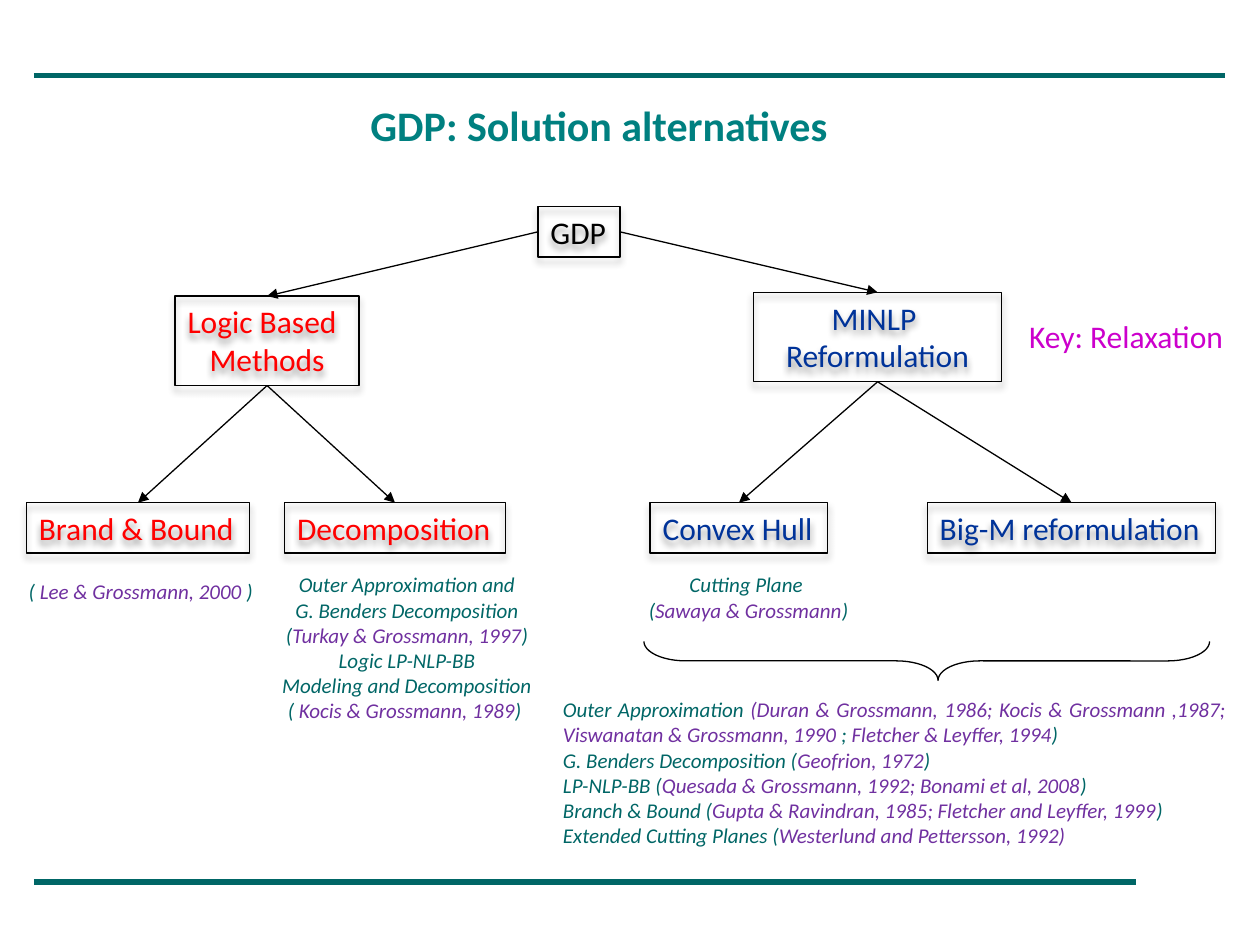
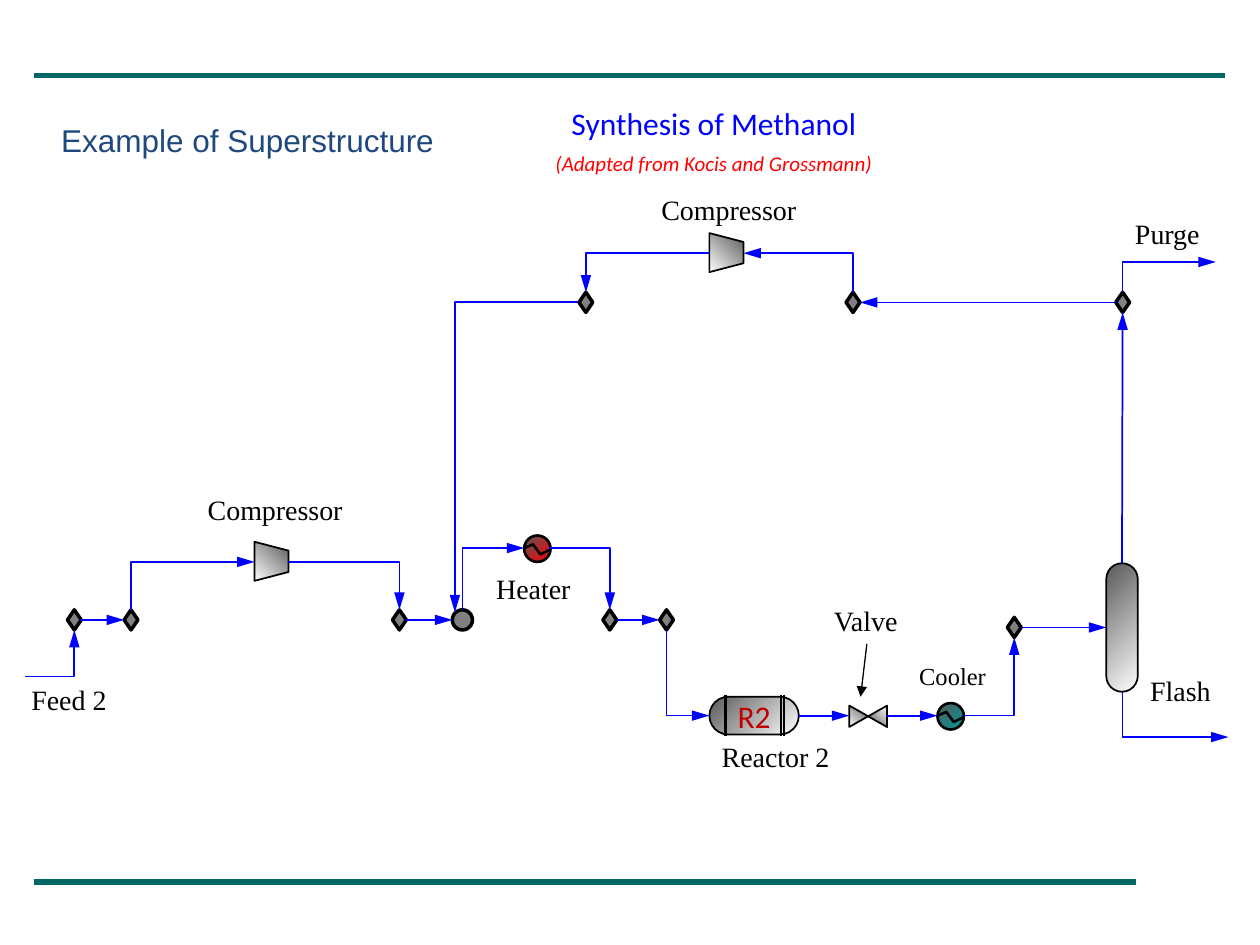
from lxml.etree import SubElement
from pptx import Presentation
from pptx.dml.color import RGBColor
from pptx.enum.shapes import MSO_CONNECTOR as CONN, MSO_SHAPE as SHAPE
from pptx.enum.text import MSO_ANCHOR as ANCHOR, PP_ALIGN as ALIGN
from pptx.oxml.ns import qn
from pptx.util import Inches, Pt

TEAL, PURPLE, RED, NAVY = "006666", "7030A0", "FF0000", "003399"
BLACK, BLUE, GREY, WHITE, STEEL = "000000", "0000FF", "808080", "FFFFFF", "595959"
NODE = dict(size=Pt(18), name="Calibri")
CITE = dict(size=Pt(12), name="Calibri", italic=True)
LABEL = dict(size=Pt(16), name="Times New Roman", color=BLACK)


def rgb(value):
    return RGBColor.from_string(value)


def inches(*values):
    return [Inches(v) for v in values]


def style(font, fmt):
    for key, value in fmt.items():
        if key == "color":
            font.color.rgb = rgb(value)
        else:
            setattr(font, key, value)


def write(sp, paragraphs, align=ALIGN.LEFT, wrap=False, anchor=ANCHOR.TOP):
    tf = sp.text_frame
    tf.word_wrap, tf.vertical_anchor = wrap, anchor
    for i, runs in enumerate(paragraphs):
        p = tf.paragraphs[0] if i == 0 else tf.add_paragraph()
        p.alignment = align
        for text, fmt in runs:
            r = p.add_run()
            r.text = text
            style(r.font, fmt)
    return sp


def text(slide, box, paragraphs, **kw):
    return write(slide.shapes.add_textbox(*inches(*box)), paragraphs, **kw)


def cite(slide, box, lines, **kw):
    paragraphs = [[(part, dict(CITE, color=(TEAL, PURPLE)[i % 2]))
                   for i, part in enumerate(line.split("|")) if part]
                  for line in lines]
    return text(slide, box, paragraphs, **kw)


def title(slide, box, words, align, **fmt):
    sp = slide.shapes.title
    sp.left, sp.top, sp.width, sp.height = inches(*box)
    write(sp, [[(words, fmt)]], align=align, wrap=True)


def shape(slide, kind, box, fill=None, width=1, adj=(), rotation=0):
    sp = slide.shapes.add_shape(kind, *inches(*box))
    sp.shadow.inherit = False
    sp.rotation = rotation
    for i, value in enumerate(adj):
        sp.adjustments[i] = value
    if fill is None:
        sp.fill.background()
    elif isinstance(fill, str):
        sp.fill.solid()
        sp.fill.fore_color.rgb = rgb(fill)
    else:
        sp.fill.gradient()
        sp.fill.gradient_angle = 135
        for stop, color in zip(sp.fill.gradient_stops, fill):
            stop.color.rgb = rgb(color)
    sp.line.color.rgb = rgb(BLACK)
    sp.line.width = Pt(width)
    return sp


def finish(c, color, width, head):
    c.line.color.rgb = rgb(color)
    c.line.width = Pt(width)
    spPr = c.element.spPr
    if head:
        SubElement(spPr.find(qn("a:ln")), qn("a:tailEnd"), type="triangle", len=head)
    SubElement(spPr, qn("a:effectLst"))
    return c


def line(slide, start, end, color=BLACK, width=0.75, head=None):
    c = slide.shapes.add_connector(CONN.STRAIGHT, 0, 0, 0, 0)
    if isinstance(start[0], (int, float)):
        c.begin_x, c.begin_y = inches(*start)
    else:
        c.begin_connect(*start)
    if isinstance(end[0], (int, float)):
        c.end_x, c.end_y = inches(*end)
    else:
        c.end_connect(*end)
    return finish(c, color, width, head)


def stream(slide, start, end):
    return line(slide, start, end, BLUE, 1, "lg")


def elbow(slide, start, end, vertical_first=False):
    (x1, y1), (x2, y2) = start, end
    dx, dy = x2 - x1, y2 - y1
    cx, cy = (x1 + x2) / 2, (y1 + y2) / 2
    if vertical_first:
        angle = 90 if dx > 0 > dy else 270
    else:
        angle = 180 if dx < 0 else 0
    u, v = {0: (dx, dy), 90: (dy, -dx), 180: (-dx, -dy), 270: (-dy, dx)}[angle]
    c = slide.shapes.add_connector(
        CONN.ELBOW, *inches(cx - u / 2, cy - v / 2, cx + u / 2, cy + v / 2))
    spPr = c.element.spPr
    spPr.find(qn("a:prstGeom")).set("prst", "bentConnector2")
    if angle:
        spPr.find(qn("a:xfrm")).set("rot", str(angle * 60000))
    return finish(c, BLUE, 1, "lg")


def add_bands(prs, slide):
    for y, right in ((0.6, 9.72), (7, 9.02)):
        band = line(slide, (0.27, y), (right, y), TEAL, 3)
        prs.slide_master.shapes.element.append(band.element)


def node(slide, box, lines, color, align=ALIGN.LEFT, wrap=False):
    sp = shape(slide, SHAPE.RECTANGLE, box, width=0.75)
    shadow = SubElement(sp.element.spPr.find(qn("a:effectLst")), qn("a:outerShdw"),
                        blurRad=str(Pt(4)), dist=str(Pt(3)), dir="5400000", rotWithShape="0")
    tint = SubElement(shadow, qn("a:srgbClr"), val=BLACK)
    SubElement(tint, qn("a:alpha"), val="40000")
    return write(sp, [[(words, dict(NODE, color=color))] for words in lines], align, wrap)


def branch(slide, parent, children, color, left, top):
    for x, width, words in children:
        child = node(slide, (left + x, top, width, 0.4), [words], color)
        line(slide, (parent, 2), (child, 0), head="med")


def logic_branch(slide, root, left, top):
    methods = node(slide, (left + 1.18, top, 1.46, 0.71), ["Logic Based", "Methods"], RED)
    methods.text_frame.paragraphs[1].alignment = ALIGN.CENTER
    line(slide, (root, 1), (methods, 0), head="med")
    branch(slide, methods, [(0, 1.77, "Brand & Bound"), (2.05, 1.75, "Decomposition")],
           RED, left, top + 1.64)
    cite(slide, (left - 0.08, top + 2.19, 2, 0.3), ["( |Lee & Grossmann, 2000 |)"])
    cite(slide, (left + 1.92, top + 2.14, 2.2, 1.31), [
        "Outer Approximation and",
        "G. Benders Decomposition",
        "(|Turkay & Grossmann, 1997|)",
        "Logic LP-NLP-BB",
        "Modeling and Decomposition",
        "( |Kocis & Grossmann, 1989|) "], align=ALIGN.CENTER)


def minlp_branch(slide, root, left, top):
    minlp = node(slide, (left + 0.82, top, 1.97, 0.71), ["MINLP ", "Reformulation"],
                 NAVY, ALIGN.CENTER, True)
    line(slide, (root, 3), (minlp, 0), head="med")
    text(slide, (left + 2.91, top + 0.15, 1.76, 0.4),
         [[("Key: Relaxation", dict(NODE, color="CC00CC"))]])
    branch(slide, minlp, [(0, 1.41, "Convex Hull"), (2.2, 2.29, "Big-M reformulation")],
           NAVY, left, top + 1.67)
    cite(slide, (left - 0.12, top + 2.17, 1.8, 0.5),
         ["Cutting Plane ", "(|Sawaya & Grossmann|)"], align=ALIGN.CENTER)
    shape(slide, SHAPE.RIGHT_BRACE, (left + 2.04, top + 0.68, 0.31, 4.49),
          width=0.75, adj=(1.07, 0.48), rotation=90)
    cite(slide, (left - 0.79, top + 3.16, 5.46, 1.31), [
        "Outer Approximation |(Duran & Grossmann, 1986; Kocis & Grossmann ,1987; "
        "Viswanatan & Grossmann, 1990| ; |Fletcher & Leyffer, 1994|) ",
        "G. Benders Decomposition (|Geofrion, 1972|)",
        "LP-NLP-BB (|Quesada & Grossmann, 1992; Bonami et al, 2008|)",
        "Branch & Bound (|Gupta & Ravindran, 1985; Fletcher and Leyffer, 1999|)",
        "Extended Cutting Planes (|Westerlund and Pettersson, 1992)"],
        align=ALIGN.JUSTIFY, wrap=True)


def alternatives_slide(slide):
    title(slide, (2.84, 0.74, 3.87, 0.5), "GDP: Solution alternatives", ALIGN.LEFT,
          size=Pt(24), name="Calibri", bold=True, color="008080")
    root = node(slide, (4.27, 1.64, 0.65, 0.4), ["GDP"], BLACK)
    logic_branch(slide, root, 0.21, 2.35)
    minlp_branch(slide, root, 5.16, 2.32)


def junction(slide, x, y, kind=SHAPE.DIAMOND, width=0.11):
    return shape(slide, kind, (x - width / 2, y - 0.08, width, 0.16), GREY, 2)


def vessel(slide, box):
    return shape(slide, SHAPE.ROUNDED_RECTANGLE, box, (WHITE, STEEL), adj=(0.5,))


def compressor(slide, left, top):
    shape(slide, SHAPE.TRAPEZOID, (left, top, 0.31, 0.27), (WHITE, STEEL),
          adj=(0.26,), rotation=90)


def exchanger(slide, left, top, color):
    shape(slide, SHAPE.OVAL, (left, top, 0.21, 0.21), (color, STEEL), 1.5)
    zigzag = [inches(left + x, top + y)
              for x, y in ((0, 0.1), (0.07, 0.07), (0.13, 0.15), (0.21, 0.11))]
    fb = slide.shapes.build_freeform(*zigzag[0])
    fb.add_line_segments(zigzag[1:], close=False)
    sp = fb.convert_to_shape()
    sp.shadow.inherit = False
    sp.fill.background()
    sp.line.color.rgb = rgb(BLACK)
    sp.line.width = Pt(1.5)


def valve(slide, left, top):
    for x, rotation in ((0.15, 270), (0, 90)):
        shape(slide, SHAPE.ISOSCELES_TRIANGLE, (left + x, top, 0.17, 0.15),
              (WHITE, STEEL), rotation=rotation)


def reactor(slide, left, top):
    sp = vessel(slide, (left, top, 0.71, 0.3))
    write(sp, [[("R2", dict(NODE, color="C00000"))]], ALIGN.CENTER, True, ANCHOR.MIDDLE)
    for x in (0.12, 0.13, 0.57, 0.59):
        line(slide, (left + x, top - 0.01), (left + x, top + 0.31), width=1)
    return sp


def feed_section(slide, left, base):
    feed, split, merge = [junction(slide, left + x, base) for x in (0.39, 0.84, 2.97)]
    mixer_x = left + 3.47
    junction(slide, mixer_x, base, SHAPE.OVAL, 0.16)
    compressor(slide, left + 1.8, base - 0.6)
    elbow(slide, (left, base + 0.45), (left + 0.39, base + 0.08))
    stream(slide, (feed, 3), (split, 1))
    elbow(slide, (left + 0.84, base - 0.08), (left + 1.82, base - 0.46), True)
    elbow(slide, (left + 2.09, base - 0.46), (left + 2.97, base - 0.08))
    stream(slide, (merge, 3), (mixer_x - 0.08, base))


def reaction_section(slide, left, base):
    outlet, drop = [junction(slide, left + x, base) for x in (1.17, 1.62)]
    run = base + 0.76
    exchanger(slide, left + 0.49, base - 0.67, RED)
    elbow(slide, (left, base - 0.08), (left + 0.49, base - 0.57), True)
    elbow(slide, (left + 0.69, base - 0.57), (left + 1.17, base - 0.08))
    stream(slide, (outlet, 3), (drop, 1))
    r2 = reactor(slide, left + 1.96, run - 0.15)
    elbow(slide, (left + 1.62, base + 0.08), (left + 1.96, run), True)
    valve(slide, left + 3.06, run - 0.07)
    stream(slide, (r2, 3), (left + 3.07, run))
    exchanger(slide, left + 3.77, run - 0.1, "009999")
    stream(slide, (left + 3.37, run), (left + 3.77, run))
    line(slide, (left + 3.21, base + 0.19), (left + 3.16, base + 0.61), head="med")


def flash_section(slide, left, base):
    inlet = junction(slide, left + 0.4, base)
    elbow(slide, (left, base + 0.7), (left + 0.4, base + 0.08))
    flash = vessel(slide, (left + 1.13, base - 0.51, 0.25, 1.02))
    stream(slide, (inlet, 3), (flash, 1))
    x = left + 1.26
    elbow(slide, (x, base + 0.51), (x + 0.84, base + 0.87), True)
    return flash


def recycle_section(slide, flash, left, base):
    joint, turn, purge = [junction(slide, left + x, base) for x in (1.04, 3.16, 5.3)]
    compressor(slide, left + 2, base - 0.53)
    stream(slide, (flash, 0), (purge, 2))
    stream(slide, (purge, 1), (turn, 3))
    elbow(slide, (left + 5.3, base - 0.08), (left + 6.04, base - 0.32), True)
    elbow(slide, (left + 3.16, base - 0.08), (left + 2.29, base - 0.39), True)
    elbow(slide, (left + 2.02, base - 0.39), (left + 1.04, base - 0.08))
    elbow(slide, (left + 0.98, base), (left, base + 2.46))


def methanol_slide(slide):
    title(slide, (0.37, 0.91, 3.19, 0.4), "Example of Superstructure", ALIGN.CENTER,
          size=Pt(18), name="Arial", color="1F497D")
    heading = text(slide, (3.22, 0.78, 4.89, 0.71), [
        [("Synthesis of Methanol", dict(NODE, color=BLUE))],
        [("(Adapted from Kocis and Grossmann)", dict(CITE, color=RED))]],
        align=ALIGN.CENTER, wrap=True)
    heading.text_frame.paragraphs[1].space_before = Pt(5)
    feed_section(slide, 0.2, 4.92)
    reaction_section(slide, 3.67, 4.92)
    flash = flash_section(slide, 7.65, 4.98)
    recycle_section(slide, flash, 3.61, 2.4)
    for words, x, y, width in (
            ("Purge", 8.91, 1.67, 0.74), ("Flash", 9.03, 5.3, 0.69),
            ("Reactor 2", 5.63, 5.82, 1.07), ("Heater", 3.84, 4.49, 0.8),
            ("Compressor", 1.55, 3.86, 1.29), ("Compressor", 5.15, 1.48, 1.29),
            ("Feed 2", 0.15, 5.37, 0.81), ("Valve", 6.52, 4.74, 0.71)):
        text(slide, (x, y, width, 0.37), [[(words, LABEL)]])
    text(slide, (7.07, 5.2, 0.98, 0.34), [[("Cooler", dict(LABEL, size=Pt(14)))]],
         align=ALIGN.CENTER, wrap=True)


def main():
    prs = Presentation()
    prs.slide_width, prs.slide_height = inches(10, 7.5)
    slides = [prs.slides.add_slide(prs.slide_layouts[5]) for _ in range(2)]
    add_bands(prs, slides[0])
    alternatives_slide(slides[0])
    methanol_slide(slides[1])
    prs.save("out.pptx")


if __name__ == "__main__":
    main()
